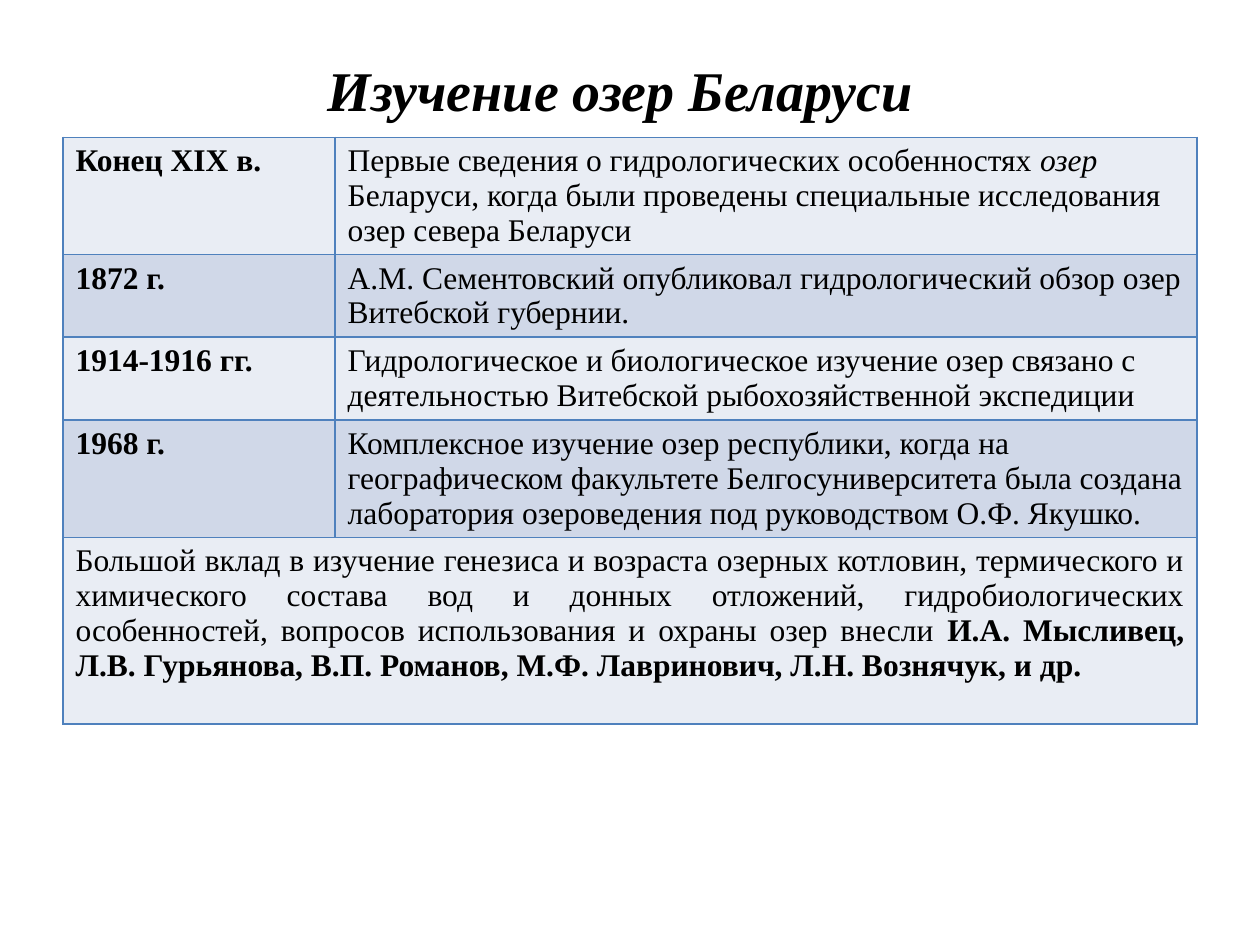
from dataclasses import dataclass

from lxml.etree import SubElement
from pptx import Presentation
from pptx.dml.color import RGBColor
from pptx.enum.text import PP_ALIGN
from pptx.oxml.ns import qn
from pptx.util import Inches, Pt


@dataclass(frozen=True)
class Theme:
    font: str = "Times New Roman"
    text: str = "000000"
    border: str = "4F81BD"
    bands: tuple = ("E9EDF4", "D0D8E8")
    title_size: int = 32
    body_size: int = 18
    border_width: int = 1


PERIODS = [
    ("Конец XIX в.", [
        ("Первые сведения о гидрологических особенностях ", {}),
        ("озер ", {"italic": True}),
        ("Беларуси, когда были проведены специальные исследования озер севера Беларуси", {}),
    ]),
    ("1872 г.", [
        ("А.М. Сементовский опубликовал гидрологический обзор озер Витебской губернии.", {}),
    ]),
    ("1914-1916 гг.", [
        ("Гидрологическое и биологическое изучение озер связано с деятельностью "
         "Витебской рыбохозяйственной экспедиции", {}),
    ]),
    ("1968 г.", [
        ("Комплексное изучение озер республики, когда на географическом факультете "
         "Белгосуниверситета была создана лаборатория озероведения под руководством "
         "О.Ф. Якушко.", {}),
    ]),
]
CONTRIBUTORS = [
    ("Большой вклад в изучение генезиса и возраста озерных котловин, термического и "
     "химического состава вод и донных отложений, гидробиологических особенностей, "
     "вопросов использования и охраны озер внесли ", {}),
    ("И.А. Мысливец, Л.В. Гурьянова, В.П. Романов, М.Ф. Лавринович, "
     "Л.Н. Вознячук, и др.", {"bold": True}),
]
COLUMN_WIDTHS = (2.16, 6.84)
ROW_HEIGHTS = (0.93, 0.65, 0.66, 0.93, 1.48)


def add_text(paragraph, text, *, theme, size, bold=False, italic=False):
    run = paragraph.add_run()
    run.text = text
    font = run.font
    font.name, font.size = theme.font, Pt(size)
    font.bold, font.italic = bold, italic
    font.color.rgb = RGBColor.from_string(theme.text)


class SlideBuilder:
    def __init__(self, slide, theme):
        self.slide = slide
        self.theme = theme

    def title(self, text, left, top, width, height):
        shape = self.slide.shapes.add_textbox(
            Inches(left), Inches(top), Inches(width), Inches(height))
        shape.text_frame.word_wrap = True
        paragraph = shape.text_frame.paragraphs[0]
        paragraph.alignment = PP_ALIGN.CENTER
        add_text(paragraph, text, theme=self.theme, size=self.theme.title_size,
                 bold=True, italic=True)

    def table(self, left, top, column_widths, row_heights):
        table = self.slide.shapes.add_table(
            len(row_heights), len(column_widths), Inches(left), Inches(top),
            Inches(sum(column_widths)), Inches(sum(row_heights))).table
        table.first_row = table.horz_banding = False
        for column, width in zip(table.columns, column_widths):
            column.width = Inches(width)
        for index, (row, height) in enumerate(zip(table.rows, row_heights)):
            row.height = Inches(height)
            for cell in row.cells:
                self.cell_borders(cell)
                cell.fill.solid()
                cell.fill.fore_color.rgb = RGBColor.from_string(self.theme.bands[index % 2])
        return table

    def cell_borders(self, cell):
        """Must run before the cell fill is set: borders come first in tcPr."""
        properties = cell._tc.get_or_add_tcPr()
        for side in ("a:lnL", "a:lnR", "a:lnT", "a:lnB"):
            line = SubElement(properties, qn(side), w=str(Pt(self.theme.border_width)))
            fill = SubElement(line, qn("a:solidFill"))
            SubElement(fill, qn("a:srgbClr"), val=self.theme.border)

    def cell_text(self, cell, runs, alignment=PP_ALIGN.LEFT):
        paragraph = cell.text_frame.paragraphs[0]
        paragraph.alignment = alignment
        for text, style in runs:
            add_text(paragraph, text, theme=self.theme, size=self.theme.body_size, **style)


def main():
    presentation = Presentation()
    presentation.slide_width, presentation.slide_height = Inches(10), Inches(7.5)
    slide = presentation.slides.add_slide(presentation.slide_layouts[6])
    builder = SlideBuilder(slide, Theme())

    table = builder.table(0.5, 1.09, COLUMN_WIDTHS, ROW_HEIGHTS)
    for row, (period, description) in enumerate(PERIODS):
        builder.cell_text(table.cell(row, 0), [(period, {"bold": True})])
        builder.cell_text(table.cell(row, 1), description)
    last_row = len(PERIODS)
    summary = table.cell(last_row, 0)
    summary.merge(table.cell(last_row, 1))
    builder.cell_text(summary, CONTRIBUTORS, PP_ALIGN.JUSTIFY)

    builder.title("Изучение озер Беларуси", 1.8, 0.39, 6.25, 0.64)
    presentation.save("out.pptx")


if __name__ == "__main__":
    main()
